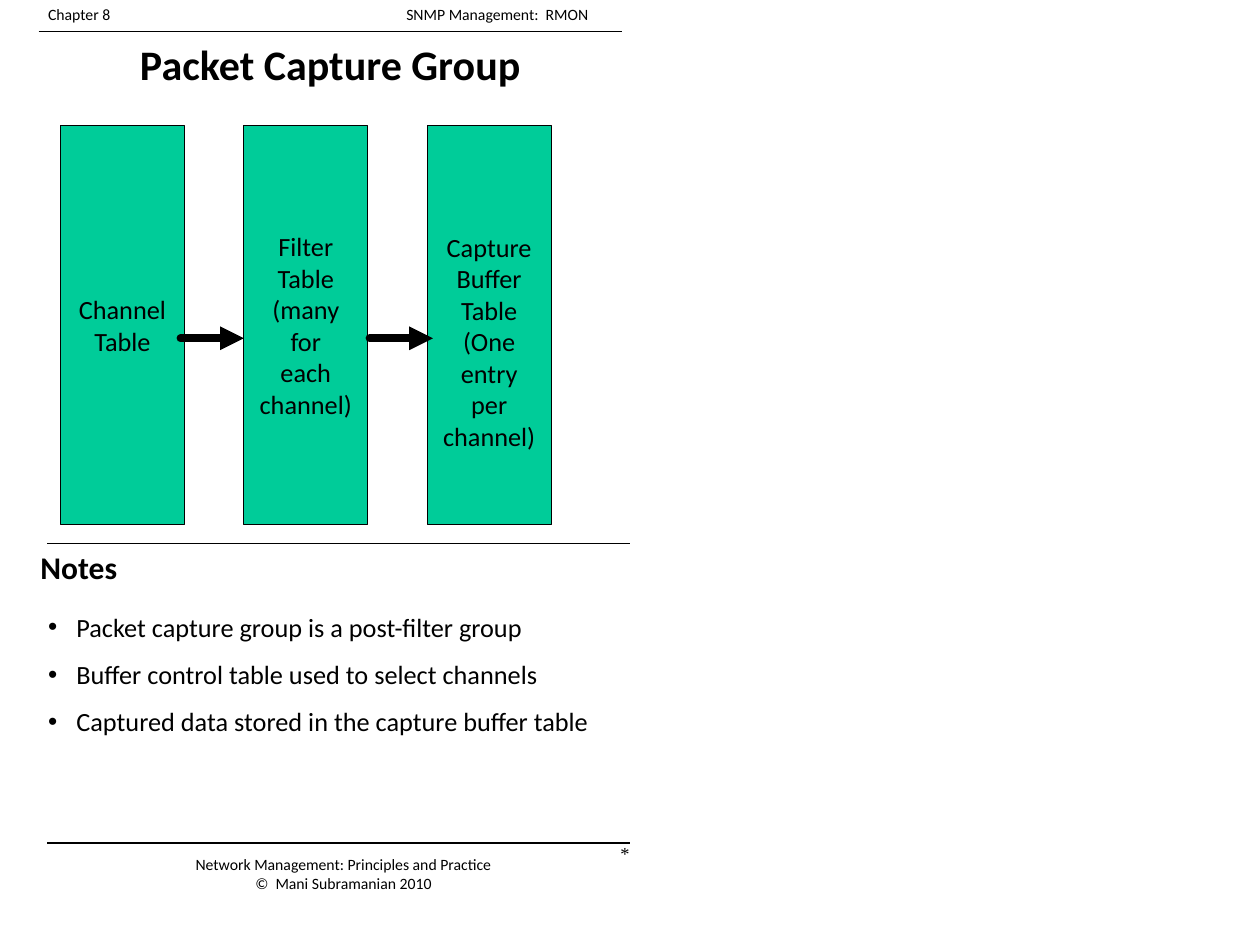
from dataclasses import dataclass

from lxml.etree import SubElement
from pptx import Presentation
from pptx.dml.color import RGBColor
from pptx.enum.shapes import MSO_CONNECTOR, MSO_SHAPE
from pptx.enum.text import MSO_ANCHOR, MSO_AUTO_SIZE, PP_ALIGN
from pptx.oxml.ns import qn
from pptx.util import Inches, Pt

BLACK = RGBColor(0x00, 0x00, 0x00)
GREEN = RGBColor(0x00, 0xCC, 0x99)
FONT = "Calibri"


@dataclass
class TextStyle:
    size: float
    bold: bool = False
    align: PP_ALIGN = PP_ALIGN.LEFT
    font: str = FONT
    spacing: float = 1.0


@dataclass
class TableBox:
    lines: list[str]
    top_inset: float = 0.05


@dataclass
class Rule:
    left: float
    top: float


BOXES = [
    TableBox(["Channel", "Table"]),
    TableBox(["Filter", "Table", "(many", "for", "each", "channel)"]),
    # The larger inset sets this label half a line lower
    TableBox(["Capture", "Buffer", "Table", "(One", "entry", "per", "channel)"], 0.39),
]
BOX_LEFT, BOX_TOP, BOX_W, BOX_H, BOX_PITCH = 0.64, 1.33, 1.31, 4.22, 1.94
ARROW_LEFTS, ARROW_Y, ARROW_W = [1.91, 3.91], 3.58, 0.67
RULES = [Rule(0.41, 0.33), Rule(0.5, 5.75), Rule(0.5, 8.92)]
RULE_W = 6.17
NOTES = [
    "Packet capture group is a post-filter group",
    "Buffer control table used to select channels",
    "Captured data stored in the capture buffer table",
]


def write(tf, lines: list[str], style: TextStyle) -> None:
    tf.word_wrap = True
    for i, line in enumerate(lines):
        p = tf.paragraphs[0] if i == 0 else tf.add_paragraph()
        p.alignment = style.align
        p.line_spacing = style.spacing
        r = p.add_run()
        r.text = line
        r.font.name = style.font
        r.font.size = Pt(style.size)
        r.font.bold = style.bold
        r.font.color.rgb = BLACK


def add_text(slide, left: float, top: float, width: float, height: float,
             lines: list[str], style: TextStyle):
    sp = slide.shapes.add_textbox(Inches(left), Inches(top), Inches(width), Inches(height))
    write(sp.text_frame, lines, style)
    return sp.text_frame


def add_line(slide, left: float, top: float, width: float, weight: float,
             arrow: bool = False) -> None:
    cxn = slide.shapes.add_connector(
        MSO_CONNECTOR.STRAIGHT, Inches(left), Inches(top), Inches(left + width), Inches(top))
    cxn.line.color.rgb = BLACK
    cxn.line.width = Pt(weight)
    if arrow:
        ln = cxn.line._get_or_add_ln()
        ln.set("cap", "rnd")
        SubElement(ln, qn("a:round"))
        SubElement(ln, qn("a:tailEnd"), type="triangle")
    SubElement(cxn._element.spPr, qn("a:effectLst"))


def add_box(slide, left: float, box: TableBox) -> None:
    sp = slide.shapes.add_shape(
        MSO_SHAPE.RECTANGLE, Inches(left), Inches(BOX_TOP), Inches(BOX_W), Inches(BOX_H))
    sp.shadow.inherit = False
    sp.fill.solid()
    sp.fill.fore_color.rgb = GREEN
    sp.line.color.rgb = BLACK
    sp.line.width = Pt(0.75)
    tf = sp.text_frame
    tf.vertical_anchor = MSO_ANCHOR.MIDDLE
    tf.margin_top = Inches(box.top_inset)
    write(tf, box.lines, TextStyle(20, align=PP_ALIGN.CENTER))


def add_bullet(p, indent: float) -> None:
    pPr = p._p.get_or_add_pPr()
    pPr.set("marL", str(Inches(indent)))
    pPr.set("indent", str(-Inches(indent)))
    SubElement(pPr, qn("a:buFont"), typeface="Arial")
    SubElement(pPr, qn("a:buChar"), char="•")


def add_tab_stop(p, pos: float) -> None:
    tabs = SubElement(p._p.get_or_add_pPr(), qn("a:tabLst"))
    SubElement(tabs, qn("a:tab"), pos=str(Inches(pos)), algn="l")


def main() -> None:
    prs = Presentation()
    prs.slide_width, prs.slide_height = Inches(13.33), Inches(10)
    slide = prs.slides.add_slide(prs.slide_layouts[5])

    # Title
    title = slide.shapes.title
    title.left, title.top = Inches(0.41), Inches(0.36)
    title.width, title.height = Inches(6.17), Inches(0.64)
    title.text_frame.auto_size = MSO_AUTO_SIZE.NONE
    title.text_frame.vertical_anchor = MSO_ANCHOR.TOP
    write(title.text_frame, ["Packet Capture Group"],
          TextStyle(32, bold=True, align=PP_ALIGN.CENTER))

    # Page header and rules
    header = add_text(slide, 0.41, 0, 6.53, 0.3,
                      ["Chapter 8\tSNMP Management:  RMON"], TextStyle(12))
    add_tab_stop(header.paragraphs[0], 3.79)
    for rule in RULES:
        add_line(slide, rule.left, rule.top, RULE_W, 1)

    # Tables and the arrows between them
    for i, box in enumerate(BOXES):
        add_box(slide, BOX_LEFT + i * BOX_PITCH, box)
    for left in ARROW_LEFTS:
        add_line(slide, left, ARROW_Y, ARROW_W, 6, arrow=True)

    # Notes
    add_text(slide, 0.33, 5.75, 1.17, 0.5, ["Notes"], TextStyle(24, bold=True))
    notes = add_text(slide, 0.41, 6.25, 6.33, 1.55, NOTES, TextStyle(20, spacing=1.5))
    for p in notes.paragraphs:
        add_bullet(p, 0.3)

    # Footer
    add_text(slide, 1.83, 9, 3.61, 0.5,
             ["Network Management: Principles and Practice", "©  Mani Subramanian 2010"],
             TextStyle(12, align=PP_ALIGN.CENTER))
    add_text(slide, 5.2, 8.86, 1.56, 0.67, ["*"],
             TextStyle(14, align=PP_ALIGN.RIGHT, font="Times New Roman"))

    prs.save("out.pptx")


if __name__ == "__main__":
    main()
